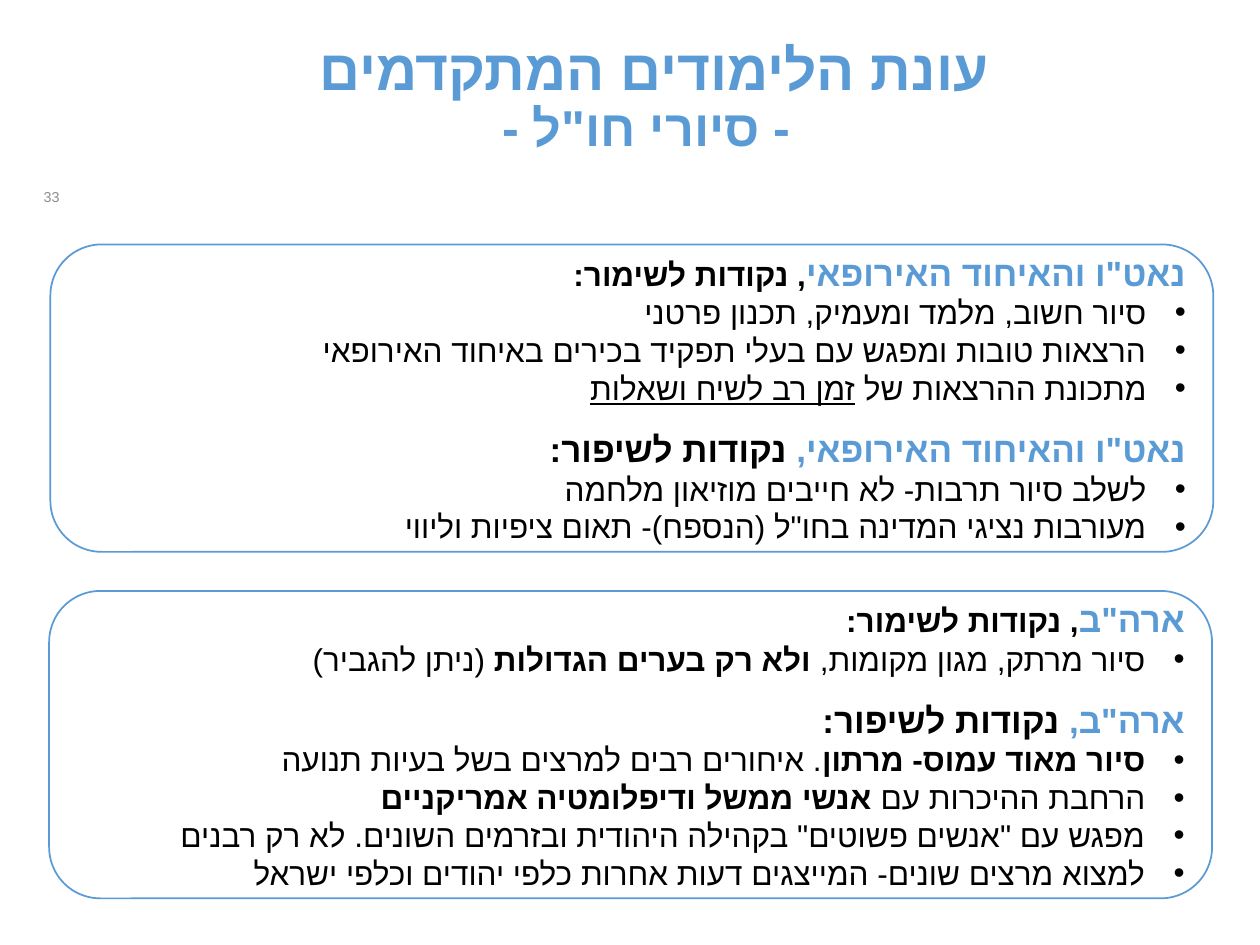
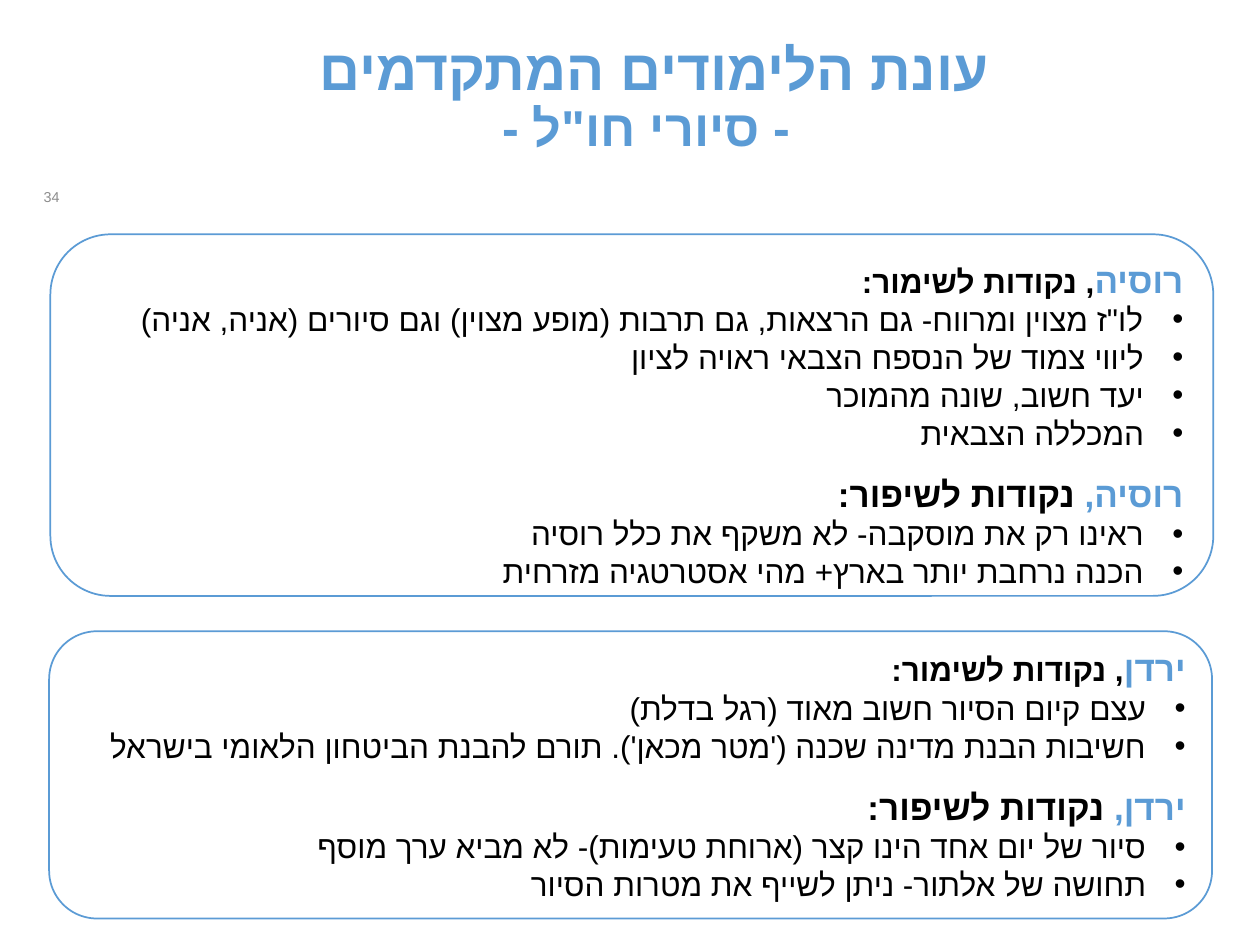
from lxml.etree import SubElement
from pptx import Presentation
from pptx.dml.color import RGBColor
from pptx.enum.shapes import MSO_SHAPE
from pptx.enum.text import MSO_ANCHOR, MSO_AUTO_SIZE, PP_ALIGN
from pptx.oxml.ns import qn
from pptx.util import Inches, Pt

BLUE, BLACK, GRAY, WHITE = "5B9BD5", "000000", "8C8C8C", "FFFFFF"
TITLE_FONT, BODY_FONT, HEBREW_FONT = "Calibri", "Roboto", "Arial"
BULLET_INDENT = Inches(0.31)
BOLD = {"bold": True}
UNDERLINE = {"underline": True}

# Each bullet is a list of (text, emphasis) pieces.
SLIDES = [
    {
        "number": "33",
        "panels": [
            {
                "place": (0.4, 1.94, 9.23, 2.44),
                "anchor": MSO_ANCHOR.MIDDLE,
                "destination": 'נאט"ו והאיחוד האירופאי',
                "keep": [
                    [("סיור חשוב, מלמד ומעמיק, תכנון פרטני", {})],
                    [("הרצאות טובות ומפגש עם בעלי תפקיד בכירים באיחוד האירופאי", {})],
                    [("מתכונת ההרצאות של ", {}), ("זמן רב לשיח ושאלות", UNDERLINE)],
                ],
                "improve": [
                    [("לשלב סיור תרבות- לא חייבים מוזיאון מלחמה", {})],
                    [('מעורבות נציגי המדינה בחו"ל (הנספח)- תאום ציפיות וליווי', {})],
                ],
            },
            {
                "place": (0.39, 4.69, 9.23, 2.44),
                "anchor": MSO_ANCHOR.MIDDLE,
                "destination": 'ארה"ב',
                "keep": [
                    [("סיור מרתק, מגון מקומות, ", {}),
                     ("ולא רק בערים הגדולות ", BOLD),
                     ("(ניתן להגביר)", {})],
                ],
                "improve": [
                    [("סיור מאוד עמוס- מרתון", BOLD),
                     (". איחורים רבים למרצים בשל בעיות תנועה", {})],
                    [("הרחבת ההיכרות עם ", {}),
                     ("אנשי ממשל ודיפלומטיה אמריקניים", BOLD)],
                    [('מפגש עם "אנשים פשוטים" בקהילה היהודית ובזרמים השונים. לא רק רבנים', {})],
                    [("למצוא מרצים שונים- המייצגים דעות אחרות כלפי יהודים וכלפי ישראל", {})],
                ],
            },
        ],
    },
    {
        "number": "34",
        "panels": [
            {
                "place": (0.4, 1.86, 9.23, 2.87),
                "anchor": MSO_ANCHOR.TOP,
                "destination": "רוסיה",
                "keep": [
                    [('לו"ז מצוין ומרווח- גם הרצאות, גם תרבות (מופע מצוין) וגם סיורים (אניה, אניה)', {})],
                    [("ליווי צמוד של הנספח הצבאי ראויה לציון", {})],
                    [("יעד חשוב, שונה מהמוכר", {})],
                    [("המכללה הצבאית", {})],
                ],
                "improve": [
                    [("ראינו רק את מוסקבה- לא משקף את כלל רוסיה", {})],
                    [("הכנה נרחבת יותר בארץ+ מהי אסטרטגיה מזרחית", {})],
                ],
            },
            {
                "place": (0.39, 5.01, 9.23, 2.28),
                "anchor": MSO_ANCHOR.MIDDLE,
                "destination": "ירדן",
                "keep": [
                    [("עצם קיום הסיור חשוב מאוד (רגל בדלת)", {})],
                    [("חשיבות הבנת מדינה שכנה ('מטר מכאן'). תורם להבנת הביטחון הלאומי בישראל", {})],
                ],
                "improve": [
                    [("סיור של יום אחד הינו קצר (ארוחת טעימות)- לא מביא ערך מוסף", {})],
                    [("תחושה של אלתור- ניתן לשייף את מטרות הסיור", {})],
                ],
            },
        ],
    },
]


def paint(fill, color):
    fill.solid()
    fill.fore_color.rgb = RGBColor.from_string(color)


def add_run(paragraph, text, color, font_name, size, align=PP_ALIGN.JUSTIFY, **font_format):
    """Add right-to-left text, with the Hebrew letters in their own font."""
    paragraph.alignment = align
    paragraph._p.get_or_add_pPr().set("rtl", "1")
    run = paragraph.add_run()
    run.text = text
    font_format = {"name": font_name, "size": Pt(size), "bold": False} | font_format
    for attribute, value in font_format.items():
        setattr(run.font, attribute, value)
    paint(run.font.fill, color)
    properties = run._r.get_or_add_rPr()
    properties.set("lang", "he-IL")
    SubElement(properties, qn("a:cs"), typeface=HEBREW_FONT)


prs = Presentation()
prs.slide_width, prs.slide_height = Inches(10), Inches(7.5)

for content in SLIDES:
    slide = prs.slides.add_slide(prs.slide_layouts[5])
    paint(slide.background.fill, WHITE)

    title = slide.shapes.title
    title.left, title.top, title.width, title.height = map(Inches, (0.67, 0.25, 8.92, 1.08))
    title.text_frame.auto_size = MSO_AUTO_SIZE.NONE
    title.text_frame.vertical_anchor = MSO_ANCHOR.MIDDLE
    heading = title.text_frame.paragraphs[0]
    heading.line_spacing = 0.9
    add_run(heading, "עונת הלימודים המתקדמים ", BLUE, TITLE_FONT, 32.4, PP_ALIGN.CENTER, bold=True)
    heading.add_line_break()
    add_run(heading, '- סיורי חו"ל -', BLUE, TITLE_FONT, 28.8, PP_ALIGN.CENTER, bold=True)

    page = slide.shapes.add_textbox(*map(Inches, (-0.01, 1.43, 0.58, 0.27))).text_frame
    page.word_wrap = True
    page.vertical_anchor = MSO_ANCHOR.MIDDLE
    add_run(page.paragraphs[0], content["number"], GRAY, TITLE_FONT, 8.2, PP_ALIGN.RIGHT)

    for panel in content["panels"]:
        box = slide.shapes.add_shape(MSO_SHAPE.ROUNDED_RECTANGLE, *map(Inches, panel["place"]))
        box.shadow.inherit = False
        paint(box.fill, WHITE)
        paint(box.line.fill, BLUE)
        box.line.width = Pt(1)
        frame = box.text_frame
        frame.word_wrap = True
        frame.vertical_anchor = panel["anchor"]

        destination = panel["destination"]
        keep_heading = frame.paragraphs[0]
        add_run(keep_heading, destination, BLUE, BODY_FONT, 20, bold=True)
        add_run(keep_heading, ", נקודות לשימור:", BLACK, BODY_FONT, 18, bold=True)

        for section in ("keep", "improve"):
            if section == "improve":
                improve_heading = frame.add_paragraph()
                improve_heading.line_spacing = 1.5
                add_run(improve_heading, destination + ", ", BLUE, BODY_FONT, 20, bold=True)
                add_run(improve_heading, "נקודות לשיפור:", BLACK, BODY_FONT, 20, bold=True)
            for pieces in panel[section]:
                point = frame.add_paragraph()
                for text, emphasis in pieces:
                    add_run(point, text, BLACK, BODY_FONT, 18, **emphasis)
                properties = point._p.get_or_add_pPr()
                properties.set("marL", str(BULLET_INDENT))
                properties.set("indent", str(-BULLET_INDENT))
                SubElement(properties, qn("a:buFont"), typeface="Arial")
                SubElement(properties, qn("a:buChar"), char="•")

prs.save("out.pptx")
